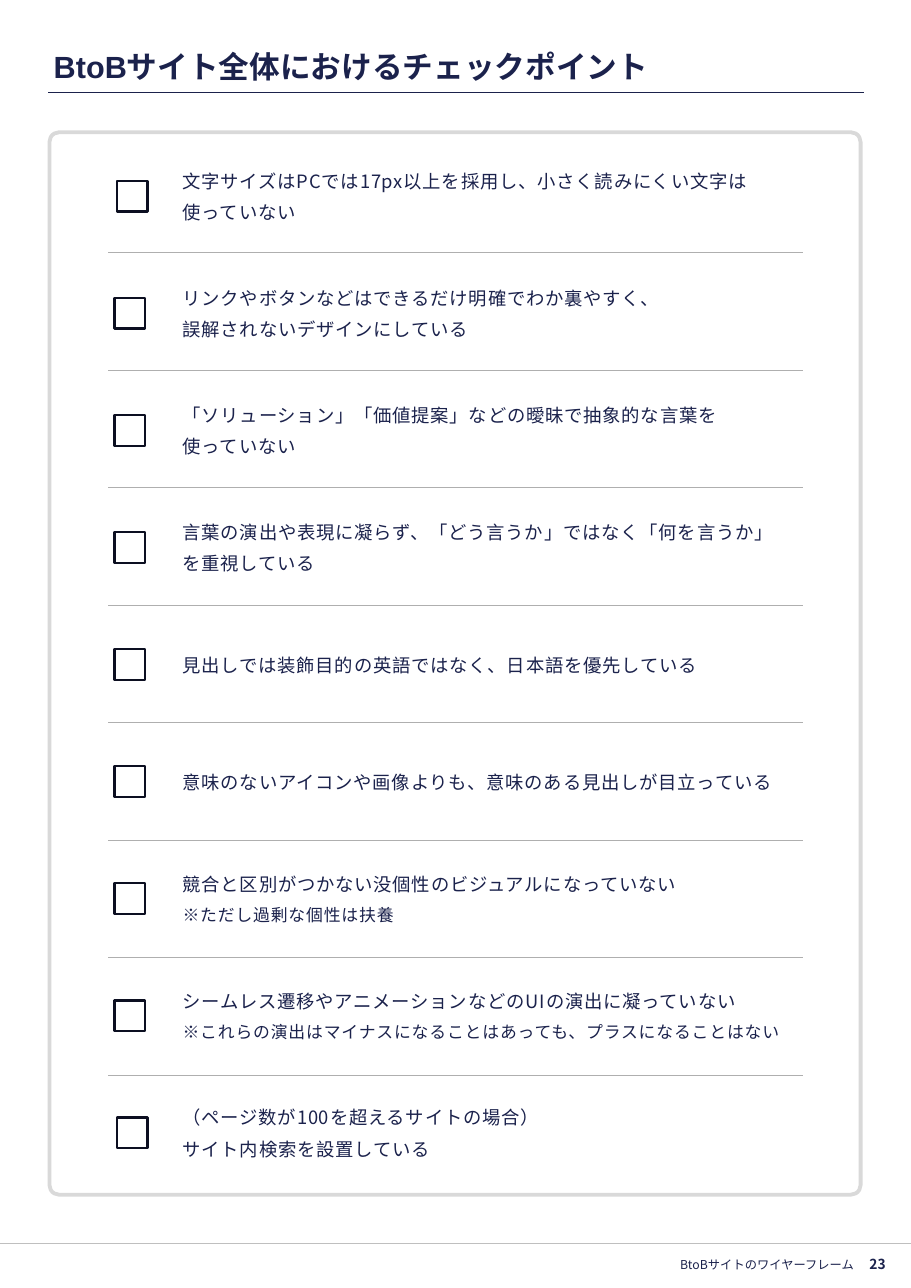
from lxml import etree
from pptx import Presentation
from pptx.dml.color import RGBColor
from pptx.enum.shapes import MSO_CONNECTOR, MSO_SHAPE
from pptx.enum.text import MSO_ANCHOR, PP_ALIGN
from pptx.oxml.ns import qn
from pptx.util import Cm, Pt

STRAIGHT = MSO_CONNECTOR.STRAIGHT
RECT, ROUNDED = MSO_SHAPE.RECTANGLE, MSO_SHAPE.ROUNDED_RECTANGLE
MIDDLE = MSO_ANCHOR.MIDDLE
LEFT, CENTER, RIGHT = PP_ALIGN.LEFT, PP_ALIGN.CENTER, PP_ALIGN.RIGHT

NAVY, INK, WHITE = "1B224C", "0C0F21", "FFFFFF"
FRAME_GRAY, RULE_GRAY, FOOTER_GRAY = "D9D9D9", "AFAFAF", "BFBFBF"
GOTHIC = "Noto Sans CJK JP"
ROW_PITCH, RULE_PITCH = 2.7, 2.71

# Each check point is a list of lines; lines starting with ※ are notes
CHECKPOINTS = [
    ["文字サイズはPCでは17px以上を採用し、小さく読みにくい文字は", "使っていない"],
    ["リンクやボタンなどはできるだけ明確でわか裏やすく、", "誤解されないデザインにしている"],
    ["「ソリューション」「価値提案」などの曖昧で抽象的な言葉を", "使っていない"],
    ["言葉の演出や表現に凝らず、「どう言うか」ではなく「何を言うか」", "を重視している"],
    ["見出しでは装飾目的の英語ではなく、日本語を優先している"],
    ["意味のないアイコンや画像よりも、意味のある見出しが目立っている"],
    ["競合と区別がつかない没個性のビジュアルになっていない", "※ただし過剰な個性は扶養"],
    ["シームレス遷移やアニメーションなどのUIの演出に凝っていない",
     "※これらの演出はマイナスになることはあっても、プラスになることはない"],
    ["（ページ数が100を超えるサイトの場合）", "サイト内検索を設置している"],
]


def rgb(value):
    return RGBColor.from_string(value)


def add_rule(s, x1, x2, y, color, width):
    line = s.shapes.add_connector(STRAIGHT, Cm(x1), Cm(y), Cm(x2), Cm(y))
    line.line.color.rgb = rgb(color)
    line.line.width = Pt(width)
    etree.SubElement(line._element.spPr, qn("a:effectLst"))


def add_box(s, kind, x, y, w, h, line, width, fill=None):
    sp = s.shapes.add_shape(kind, Cm(x), Cm(y), Cm(w), Cm(h))
    sp.shadow.inherit = False
    if fill:
        sp.fill.solid()
        sp.fill.fore_color.rgb = rgb(fill)
    else:
        sp.fill.background()
    sp.line.color.rgb = rgb(line)
    sp.line.width = Pt(width)
    return sp


def style_paragraph(p, size, font, bold, spacing):
    p.font.size = Pt(size)
    p.font.bold = bold
    p.font.color.rgb = rgb(NAVY)
    p.font.name = font
    # Japanese typeface and letter spacing
    props = p._p.pPr.find(qn("a:defRPr"))
    etree.SubElement(props, qn("a:ea")).set("typeface", GOTHIC)
    if spacing:
        props.set("spc", str(int(spacing * 100)))


def add_text(s, x, y, w, h, lines, size, font=GOTHIC, bold=False,
             align=LEFT, after=0, spacing=0, wrap=True):
    tf = s.shapes.add_textbox(Cm(x), Cm(y), Cm(w), Cm(h)).text_frame
    tf.word_wrap = wrap
    tf.vertical_anchor = MIDDLE
    tf.margin_left = tf.margin_right = tf.margin_top = tf.margin_bottom = Cm(0.1)
    for i, text in enumerate(lines):
        p = tf.add_paragraph() if i else tf.paragraphs[0]
        p.text = text
        p.alignment = align
        p.space_after = Pt(after)
        style_paragraph(p, size - 1 if text.startswith("※") else size, font, bold, spacing)


def add_checkpoint(s, i, lines):
    add_text(s, 4.11, 3.73 + i * ROW_PITCH, 14.3, 1.6, lines, 12, after=6, spacing=0.5)
    # The first and last check boxes sit slightly further right
    x = 2.69 if i in (0, len(CHECKPOINTS) - 1) else 2.64
    add_box(s, RECT, x, 4.17 + i * ROW_PITCH, 0.71, 0.71, INK, 1.5, WHITE)


def main():
    prs = Presentation()
    prs.slide_width, prs.slide_height = Cm(21), Cm(29.7)
    s = prs.slides.add_slide(prs.slide_layouts[6])

    # Heading
    add_rule(s, 1.11, 19.91, 2.13, NAVY, 1)
    add_text(s, 1.14, 0.99, 18.7, 1.07, ["BtoBサイト全体におけるチェックポイント"],
             20, font="Arial", bold=True)

    # Check list
    frame = add_box(s, ROUNDED, 1.14, 3.05, 18.7, 24.5, FRAME_GRAY, 2.5)
    frame.adjustments[0] = 0.012
    for i in range(len(CHECKPOINTS) - 1):
        add_rule(s, 2.49, 18.5, 5.83 + i * RULE_PITCH, RULE_GRAY, 0.75)
    for i, lines in enumerate(CHECKPOINTS):
        add_checkpoint(s, i, lines)

    # Footer
    add_rule(s, 0, 21, 28.67, FOOTER_GRAY, 0.5)
    add_text(s, 12.7, 28.9, 7.09, 0.51, ["BtoBサイトのワイヤーフレーム"], 8, align=RIGHT)
    add_text(s, 19.83, 28.9, 0.8, 0.51, ["23"], 9, bold=True, align=CENTER, wrap=False)

    prs.save("out.pptx")


if __name__ == "__main__":
    main()
